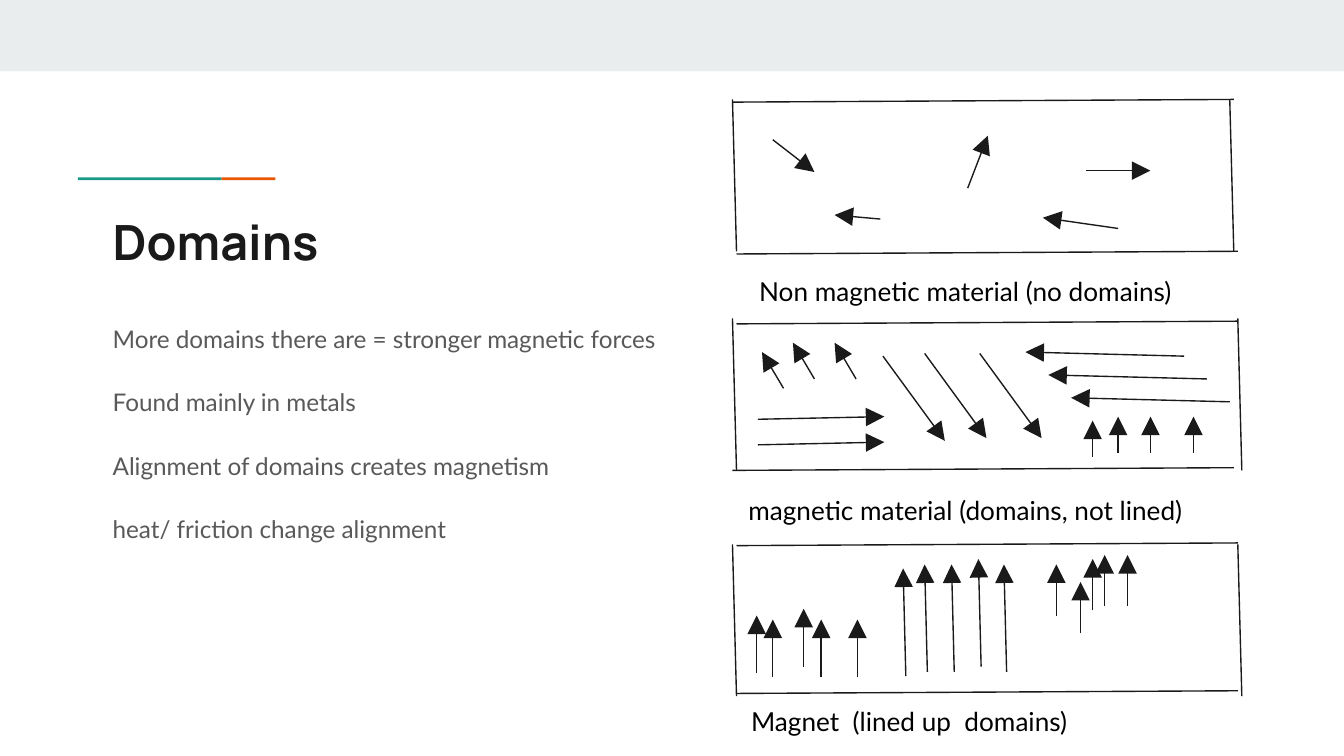
from lxml import etree
from pptx import Presentation, util as u
from pptx.dml.color import RGBColor
from pptx.enum import shapes, text
from pptx.oxml.ns import qn

INK = "1A1A1A"
tint = RGBColor.from_string

# Wide 16:9 slide
deck = Presentation()
deck.slide_width = u.Inches(10)
deck.slide_height = u.Inches(10 * 9 / 16)
slide = deck.slides.add_slide(deck.slide_layouts[6])


def write(lines, x, y, w, h, size=14, font="Lato", color="000000",
          bold=False, space=1.0, after=0):
    frame = slide.shapes.add_textbox(*map(u.Inches, (x, y, w, h))).text_frame
    frame.word_wrap = True
    frame.vertical_anchor = text.MSO_ANCHOR.TOP
    frame.margin_left = frame.margin_right = u.Inches(0.1)
    frame.margin_top = frame.margin_bottom = u.Inches(0.1)
    for i, line in enumerate(lines):
        para = frame.paragraphs[0] if i == 0 else frame.add_paragraph()
        para.line_spacing = space
        para.space_after = u.Pt(after)
        run = para.add_run()
        run.text = line
        run.font.size, run.font.name, run.font.bold = u.Pt(size), font, bold
        run.font.color.rgb = tint(color)


def draw(x, y, dx, dy, head=False):
    ends = map(u.Inches, (x, y, x + dx, y + dy))
    line = slide.shapes.add_connector(shapes.MSO_CONNECTOR.STRAIGHT, *ends)
    line.line.color.rgb = tint(INK)
    line.line.width = u.Pt(0.75)
    props = line._element.spPr
    if head:
        etree.SubElement(props.find(qn("a:ln")), qn("a:tailEnd"),
                         type="triangle", w="lg", len="lg")
    etree.SubElement(props, qn("a:effectLst"))


# Top band and two-colour accent
for x, y, w, h, color in [(0, 0, 10, 0.53, "E9EDEE"),
                          (0.58, 1.32, 1.07, 0.02, "1A9988"),
                          (1.65, 1.32, 0.4, 0.02, "EB5600")]:
    bar = slide.shapes.add_shape(shapes.MSO_SHAPE.RECTANGLE,
                                 *map(u.Inches, (x, y, w, h)))
    bar.shadow.inherit = False
    bar.fill.solid()
    bar.fill.fore_color.rgb = tint(color)
    bar.line.fill.background()

# Title and body
write(["Domains"], 0.74, 1.48, 4.36, 0.59, size=26, font="Manrope",
      color=INK, bold=True)
write(["More domains there are = stronger magnetic forces",
       "Found mainly in metals",
       "Alignment of domains creates magnetism",
       "heat/ friction change alignment"],
      0.74, 2.28, 4.55, 2.47, size=13, color="595959", space=1.15, after=16)

# Sides of the three boxes
for x, y in [(9.15, 0.74), (9.21, 2.37), (9.21, 4.05),
             (5.45, 0.74), (5.45, 2.37), (5.45, 4.05)]:
    draw(x, y, 0.03, 1.13)

# Tops and bottoms of the boxes
for x, y in [(5.45, 0.76), (5.48, 1.89), (5.48, 2.41),
             (5.45, 3.5), (5.48, 5.16), (5.48, 4.06)]:
    draw(x, y, 3.73, -0.02)

# Domain arrows: one direction, then each start point
arrows = [
    # No domains
    (0.31, 0.24, [(5.75, 1.04)]),
    (0.15, -0.39, [(7.2, 1.4)]),
    (0.48, 0, [(8.08, 1.27)]),
    (-0.34, -0.03, [(6.55, 1.63)]),
    (-0.56, -0.08, [(8.32, 1.7)]),
    # Domains not lined up
    (-0.16, -0.27, [(5.83, 2.89), (6.06, 2.82), (6.37, 2.82)]),
    (0.94, -0.02, [(5.64, 3.12), (5.64, 3.31)]),
    (0.46, 0.63, [(6.57, 2.65), (6.88, 2.63), (7.29, 2.63)]),
    (-1.18, -0.03, [(8.81, 2.65), (8.98, 2.82), (9.15, 2.99)]),
    (0, -0.27, [(8.13, 3.4), (8.32, 3.37), (8.56, 3.37), (8.88, 3.37)]),
    # Domains lined up
    (0, -0.43, [(5.63, 5.01), (5.75, 5.04), (5.98, 4.96),
                (6.11, 5.04), (6.38, 5.04)]),
    (-0.02, -0.8, [(6.74, 5.03), (6.9, 5), (7.1, 5), (7.3, 4.96), (7.49, 5)]),
    (0, -0.38, [(7.86, 4.58), (8.04, 4.71), (8.13, 4.54),
                (8.22, 4.51), (8.39, 4.51)]),
]
for dx, dy, starts in arrows:
    for x, y in starts:
        draw(x, y, dx, dy, head=True)

# Captions
for x, y, label in [(5.55, 1.95, "Non magnetic material (no domains)"),
                    (5.47, 3.58, "magnetic material (domains, not lined)"),
                    (5.49, 5.15, "Magnet  (lined up  domains)")]:
    write([label], x, y, 3.6, 0.38)

deck.save("out.pptx")
